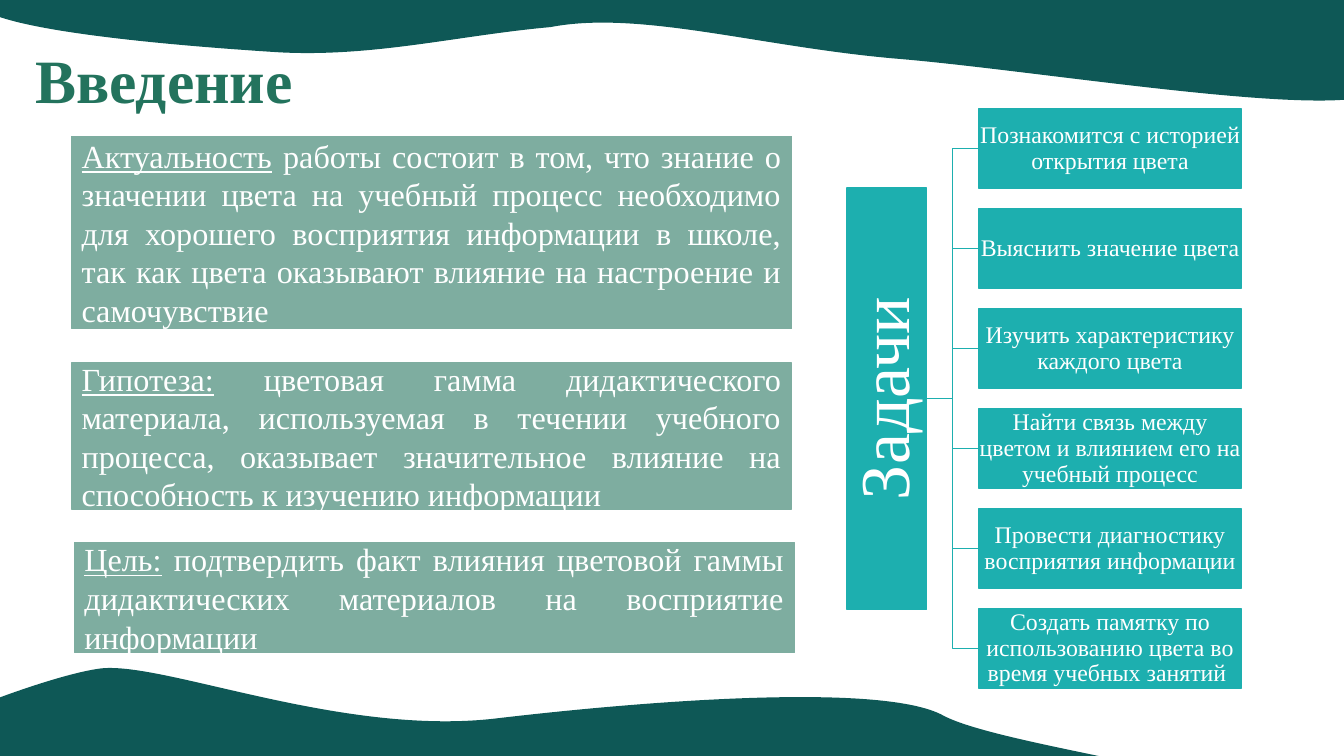
from pptx import Presentation
from pptx.dml.color import RGBColor
from pptx.enum.shapes import MSO_CONNECTOR, MSO_SHAPE
from pptx.enum.text import MSO_ANCHOR, PP_ALIGN
from pptx.oxml.ns import qn
from pptx.util import Pt
from lxml import etree

RECT = MSO_SHAPE.RECTANGLE
ELBOW = MSO_CONNECTOR.ELBOW
MIDDLE = MSO_ANCHOR.MIDDLE
LEFT, CENTER, JUSTIFY = PP_ALIGN.LEFT, PP_ALIGN.CENTER, PP_ALIGN.JUSTIFY
DARK, GREEN, SAGE, TEAL, WHITE = "0E5856", "23735D", "7EADA0", "1DAFAF", "FFFFFF"

deck = Presentation()
deck.slide_width, deck.slide_height = Pt(960), Pt(540)
slide = deck.slides.add_slide(deck.slide_layouts[6])
shapes = slide.shapes


def color(code):
    return RGBColor.from_string(code)


def write(shape, runs, size, code, align, space=1.0, inset=None, bold=False):
    """Fill a shape with one paragraph; runs are (text, underlined) pairs."""
    frame = shape.text_frame
    frame.word_wrap = True
    frame.vertical_anchor = MIDDLE
    if inset is not None:
        for side in ("left", "right", "top", "bottom"):
            setattr(frame, "margin_" + side, Pt(inset))
    para = frame.paragraphs[0]
    para.alignment, para.line_spacing = align, space
    for text, under in runs:
        run = para.add_run()
        run.text = text
        form = {"name": "Times New Roman", "size": Pt(size), "bold": bold, "underline": under}
        for key, value in form.items():
            setattr(run.font, key, value)
        run.font.color.rgb = color(code)


# Waves: chained Bezier curves, every third point lies on the curve
waves = [
    [(-95, 556.6), (-124.6, 542.9), (28.1, 482.4), (72.7, 477.4), (118.1, 473), (243.4, 525.6),
     (352.8, 513.4), (462.2, 500.4), (631.4, 487.4), (673.9, 511.2), (717.1, 534.2),
     (923.8, 557.3), (899.3, 580.3)],
    [(1010.9, -38.2), (1063.4, -23.8), (1022.4, 52.6), (980.6, 67.7), (938.2, 83.5),
     (736.6, 49.7), (638.6, 41.8), (540.7, 33.1), (456.5, 7.2), (393.1, 19.4), (328.3, 25.2),
     (267.1, 41), (199.4, 37.4), (131, 33.1), (-38.2, 20.2), (-15.1, -4.3), (8.6, -29.5),
     (496.8, -13.7), (667.4, -19.4), (838.8, -25.2), (959, -52.6), (1010.9, -38.2)],
]
for wave in waves:
    if wave[0] != wave[-1]:
        wave += [(874.8, 604.1), (414.7, 561.6), (249.1, 558),
                 (83.5, 553.7), (-65.5, 570.2), wave[0]]
    grid = [(round(x * 10), round(y * 10)) for x, y in wave]
    knots = grid[::3]
    pen = shapes.build_freeform(*knots[0], scale=Pt(1) / 10)
    pen.add_line_segments(knots[1:], close=True)
    band = pen.convert_to_shape()
    band.shadow.inherit = False
    band.fill.solid()
    band.fill.fore_color.rgb = color(DARK)
    band.line.fill.background()
    base = [min(knot[axis] for knot in knots) for axis in (0, 1)]
    for index, bend in enumerate(list(band.element.iter(qn("a:lnTo")))):
        bend.tag = qn("a:cubicBezTo")
        for place in (0, 1):
            x, y = grid[index * 3 + 1 + place]
            spot = etree.Element(qn("a:pt"), x=str(x - base[0]), y=str(y - base[1]))
            bend.insert(place, spot)

# Title
title = shapes.add_textbox(Pt(18), Pt(7.5), Pt(839), Pt(104.4))
write(title, [("Введение", False)], 44, GREEN, LEFT, 0.9, bold=True)

# White corner, text panels, then the root and the tasks of the tree
panels = [
    (51.2, 97.3, 137.5, "Актуальность", " работы состоит в том, что знание о значении цвета на учебный "
     "процесс необходимо для хорошего восприятия информации в школе, так как цвета оказывают "
     "влияние на настроение и самочувствие"),
    (51.2, 259.2, 104.5, "Гипотеза:", " цветовая гамма дидактического материала, используемая в течении "
     "учебного процесса, оказывает значительное влияние на способность к изучению информации"),
    (53.2, 387.6, 78.5, "Цель:", " подтвердить факт влияния цветовой гаммы дидактических материалов "
     "на восприятие информации"),
]
tasks = [
    "Познакомится с историей открытия цвета",
    "Выяснить значение цвета",
    "Изучить характеристику каждого цвета",
    "Найти связь между цветом и влиянием его на учебный процесс",
    "Провести диагностику восприятия информации",
    "Создать памятку по использованию цвета во время учебных занятий ",
]
ROOT, TASK, TOP, PITCH, TALL = 662, 699.2, 77.7, 71.4, 57
MID = TOP + (5 * PITCH + TALL) / 2
LONG = 301

boxes = [(795, 366, 227.5, 174, WHITE, 0, [], 17, LEFT, 1.0, None)]
for left, top, tall, head, body in panels:
    boxes.append((left, top, 514.4, tall, SAGE, 0, [(head, True), (body, False)], 23, JUSTIFY, 1.0, None))
boxes.append((ROOT - (LONG + TALL) / 2, MID - TALL / 2, LONG, TALL, TEAL, 270,
              [("Задачи", False)], 50, CENTER, 0.9, 2.5))
for row, task in enumerate(tasks):
    boxes.append((TASK, TOP + row * PITCH, 187.4, TALL, TEAL, 0, [(task, False)], 17, CENTER, 0.9, 0.4))

for left, top, wide, tall, tint, turn, runs, size, align, space, inset in boxes:
    box = shapes.add_shape(RECT, Pt(left), Pt(top), Pt(wide), Pt(tall))
    box.shadow.inherit = False
    box.rotation = turn
    box.fill.solid()
    box.fill.fore_color.rgb = color(tint)
    box.line.color.rgb = color(tint)
    box.line.width = Pt(1)
    write(box, runs, size, WHITE, align, space, inset)

# Branches from the root to each task
for row in range(len(tasks)):
    goal = TOP + row * PITCH + TALL / 2
    branch = shapes.add_connector(ELBOW, Pt(ROOT), Pt(MID), Pt(TASK), Pt(goal))
    branch.line.color.rgb = color(TEAL)
    branch.line.width = Pt(1)
    etree.SubElement(branch.element.spPr, qn("a:effectLst"))

deck.save("out.pptx")
